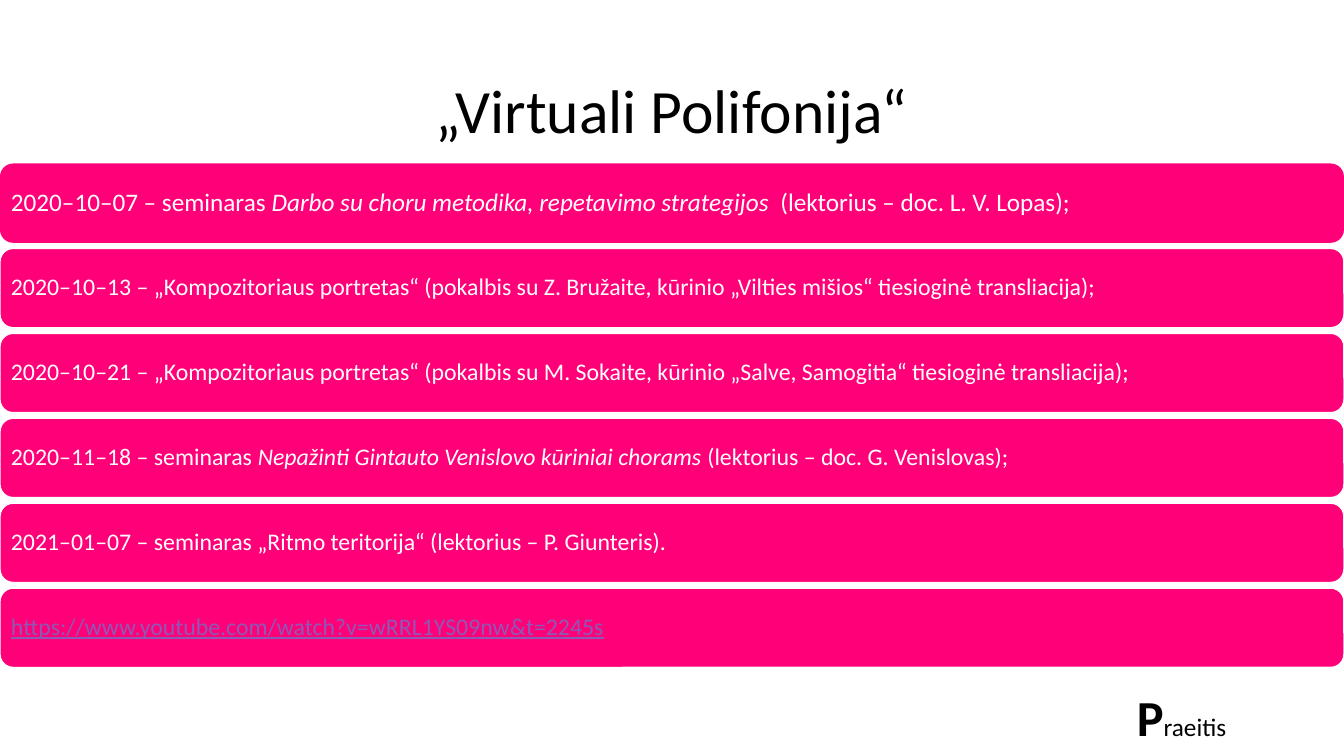
import pptx
import pptx.util
import pptx.dml.color
import pptx.enum.shapes
import pptx.enum.text

Cm = pptx.util.Cm
Pt = pptx.util.Pt
PINK = pptx.dml.color.RGBColor(0xFF, 0x00, 0x78)
WHITE = pptx.dml.color.RGBColor(0xFF, 0xFF, 0xFF)
BLACK = pptx.dml.color.RGBColor(0x00, 0x00, 0x00)
PURPLE = pptx.dml.color.RGBColor(0x8E, 0x58, 0xB6)
MIDDLE = pptx.enum.text.MSO_ANCHOR.MIDDLE

EVENTS = [
    [("2020–10–07 – seminaras ", False),
     ("Darbo su choru metodika, repetavimo strategijos ", True),
     (" (lektorius – doc. L. V. Lopas);", False)],
    [("2020–10–13 – „Kompozitoriaus portretas“ (pokalbis su Z. Bružaite, "
      "kūrinio „Vilties mišios“ tiesioginė transliacija);", False)],
    [("2020–10–21 – „Kompozitoriaus portretas“ (pokalbis su M. Sokaite, "
      "kūrinio „Salve, Samogitia“ tiesioginė transliacija);", False)],
    [("2020–11–18 – seminaras ", False),
     ("Nepažinti Gintauto Venislovo kūriniai chorams", True),
     (" (lektorius – doc. G. Venislovas);", False)],
    [("2021–01–07 – seminaras „Ritmo teritorija“ (lektorius – P. Giunteris).", False)],
    [("https://www.youtube.com/watch?v=wRRL1YS09nw&t=2245s", False)],
]


def add_run(paragraph, text, size, color):
    run = paragraph.add_run()
    run.text = text
    run.font.name = "Calibri"
    run.font.size = Pt(size)
    run.font.color.rgb = color
    return run


deck = pptx.Presentation()
deck.slide_width = Cm(33.87)
deck.slide_height = Cm(19.05)
slide = deck.slides.add_slide(deck.slide_layouts[6])

title = slide.shapes.add_textbox(Cm(2.33), Cm(1.01), Cm(29.21), Cm(3.68)).text_frame
title.word_wrap = True
title.vertical_anchor = MIDDLE
heading = title.paragraphs[0]
heading.alignment = pptx.enum.text.PP_ALIGN.CENTER
heading.line_spacing = 0.9
add_run(heading, "„Virtuali Polifonija“", 44, BLACK)

for row, parts in enumerate(EVENTS):
    bar = slide.shapes.add_shape(
        pptx.enum.shapes.MSO_SHAPE.ROUNDED_RECTANGLE,
        Cm(0), Cm(4.12 + 2.14 * row), Cm(33.87), Cm(2))
    bar.shadow.inherit = False
    bar.fill.solid()
    bar.fill.fore_color.rgb = PINK
    if row == 0:
        bar.line.fill.background()
    else:
        bar.line.color.rgb = WHITE
        bar.line.width = Pt(1)
    frame = bar.text_frame
    frame.word_wrap = True
    frame.vertical_anchor = MIDDLE
    frame.margin_left = frame.margin_right = Cm(0.18)
    frame.margin_top = frame.margin_bottom = Cm(0.18)
    event = frame.paragraphs[0]
    event.alignment = pptx.enum.text.PP_ALIGN.LEFT
    event.line_spacing = 0.9
    for text, italic in parts:
        is_link = text.startswith("https")
        run = add_run(event, text, 18 if row == 0 else 17, PURPLE if is_link else WHITE)
        run.font.italic = italic
        run.font.underline = is_link

section = slide.shapes.add_textbox(Cm(28.4), Cm(17.17), Cm(2.8), Cm(1.8)).text_frame
section.word_wrap = False
section.auto_size = pptx.enum.text.MSO_AUTO_SIZE.SHAPE_TO_FIT_TEXT
label = section.paragraphs[0]
add_run(label, "P", 36, BLACK).font.bold = True
add_run(label, "raeitis", 18, BLACK)

deck.save("out.pptx")
